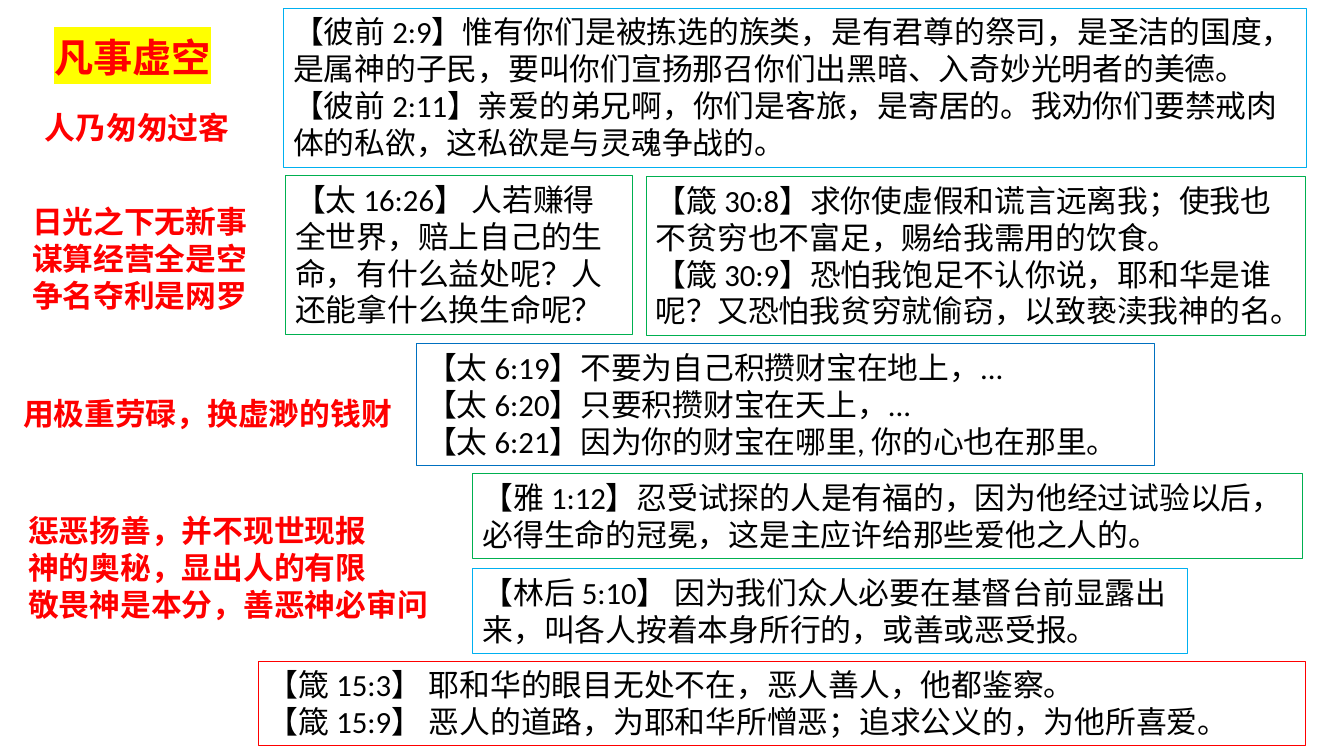
from dataclasses import dataclass

from lxml import etree
from pptx import Presentation
from pptx import util as u
from pptx.dml.color import RGBColor
from pptx.enum import lang, shapes, text
from pptx.oxml.ns import qn


@dataclass(frozen=True)
class Theme:
    font: str = "Calibri"
    body_size: int = 22
    title_size: int = 28
    line_height: float = 1.21
    inset: float = 3.6
    border: float = 0.75
    ink: str = "000000"
    red: str = "FF0000"
    yellow: str = "FFFF00"
    green: str = "00B050"
    sky: str = "00B0F0"
    blue: str = "0070C0"


class SlideBuilder:
    def __init__(self, slide, theme):
        self.slide = slide
        self.theme = theme

    def height(self, line_count, size):
        return u.Pt(2 * self.theme.inset + line_count * size * self.theme.line_height)

    def set_text(self, shape, paragraphs, size, color, bold=False, highlight=None):
        frame = shape.text_frame
        frame.word_wrap = True
        frame.auto_size = text.MSO_AUTO_SIZE.SHAPE_TO_FIT_TEXT
        frame.vertical_anchor = text.MSO_ANCHOR.TOP
        frame.text = "\n".join(paragraphs)
        for paragraph in frame.paragraphs:
            paragraph.alignment = text.PP_ALIGN.LEFT
            for run in paragraph.runs:
                font = run.font
                font.size = u.Pt(size)
                font.bold = bold
                font.language_id = lang.MSO_LANGUAGE_ID.SIMPLIFIED_CHINESE
                font.color.rgb = RGBColor.from_string(color)
                if highlight:
                    mark = etree.SubElement(run._r.get_or_add_rPr(), qn("a:highlight"))
                    etree.SubElement(mark, qn("a:srgbClr"), val=highlight)
                font.name = self.theme.font

    def heading(self, left, top, width, lines, size=None, highlight=None):
        size = size or self.theme.body_size
        shape = self.slide.shapes.add_textbox(
            u.Pt(left), u.Pt(top), u.Pt(width), self.height(len(lines), size))
        self.set_text(shape, lines, size, self.theme.red, True, highlight)

    def verse_box(self, left, top, width, line_count, border, verses):
        size = self.theme.body_size
        shape = self.slide.shapes.add_shape(
            shapes.MSO_SHAPE.RECTANGLE, u.Pt(left), u.Pt(top), u.Pt(width),
            self.height(line_count, size))
        shape.shadow.inherit = False
        shape.fill.background()
        shape.line.color.rgb = RGBColor.from_string(border)
        shape.line.width = u.Pt(self.theme.border)
        self.set_text(shape, verses, size, self.theme.ink)


def main():
    theme = Theme()
    presentation = Presentation()
    presentation.slide_width, presentation.slide_height = u.Pt(960), u.Pt(540)
    slide = presentation.slides.add_slide(presentation.slide_layouts[6])
    builder = SlideBuilder(slide, theme)

    # Themes down the left side
    builder.heading(31.7, 20.2, 131.8, ["凡事虚空"], theme.title_size, theme.yellow)
    builder.heading(25, 74.2, 168, ["人乃匆匆过客"])
    builder.heading(15.8, 141.1, 178.6,
                    ["日光之下无新事", "谋算经营全是空", "争名夺利是网罗"])
    builder.heading(9.4, 278.6, 309.6, ["用极重劳碌，换虚渺的钱财"])
    builder.heading(13, 362.2, 309.6, [
        "惩恶扬善，并不现世现报", "神的奥秘，显出人的有限", "敬畏神是本分，善恶神必审问"])

    # Bible verses: left, top, width, line count, border, paragraphs
    verse_boxes = [
        (202.3, 5.8, 730.8, 4, theme.sky, [
            "【彼前 2:9】惟有你们是被拣选的族类，是有君尊的祭司，是圣洁的国度，"
            "是属神的子民，要叫你们宣扬那召你们出黑暗、入奇妙光明者的美德。",
            "【彼前 2:11】亲爱的弟兄啊，你们是客旅，是寄居的。"
            "我劝你们要禁戒肉体的私欲，这私欲是与灵魂争战的。"]),
        (203.8, 125.3, 247.7, 4, theme.green, [
            "【太 16:26】 人若赚得全世界，赔上自己的生命，有什么益处呢？"
            "人还能拿什么换生命呢？"]),
        (461.5, 126, 470.9, 4, theme.green, [
            "【箴 30:8】求你使虚假和谎言远离我；使我也不贫穷也不富足，赐给我需用的饮食。",
            "【箴 30:9】恐怕我饱足不认你说，耶和华是谁呢？"
            "又恐怕我贫穷就偷窃，以致亵渎我神的名。"]),
        (297.4, 245.5, 527, 3, theme.blue, [
            "【太 6:19】不要为自己积攒财宝在地上，...",
            "【太 6:20】只要积攒财宝在天上，...",
            "【太 6:21】因为你的财宝在哪里, 你的心也在那里。"]),
        (337.7, 338.4, 592.6, 2, theme.green, [
            "【雅 1:12】忍受试探的人是有福的，因为他经过试验以后，"
            "必得生命的冠冕，这是主应许给那些爱他之人的。"]),
        (337.7, 406.1, 510.5, 2, theme.sky, [
            "【林后 5:10】 因为我们众人必要在基督台前显露出来，"
            "叫各人按着本身所行的，或善或恶受报。"]),
        (184.3, 472.3, 748.1, 2, theme.red, [
            "【箴 15:3】 耶和华的眼目无处不在，恶人善人，他都鉴察。",
            "【箴 15:9】 恶人的道路，为耶和华所憎恶；追求公义的，为他所喜爱。"]),
    ]
    for verse_box in verse_boxes:
        builder.verse_box(*verse_box)

    presentation.save("out.pptx")


if __name__ == "__main__":
    main()
